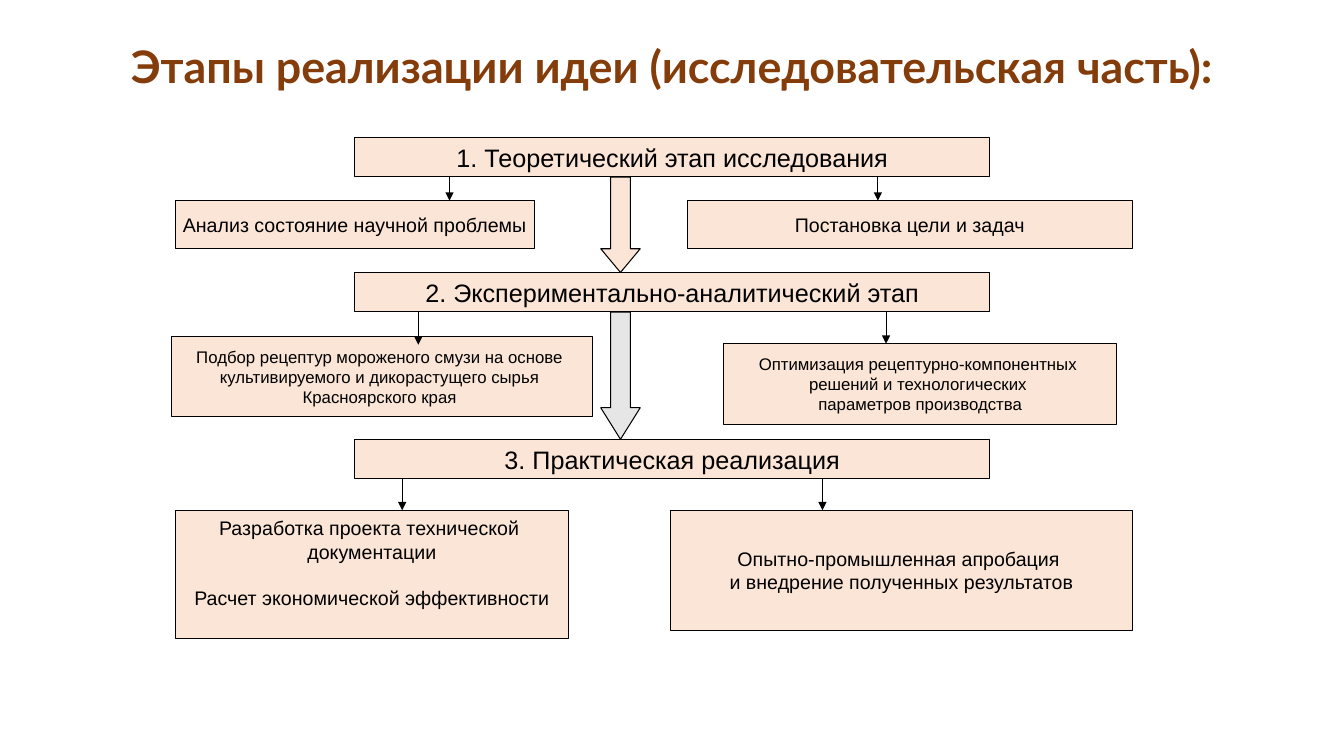
from dataclasses import dataclass

import pptx
import pptx.dml.color
import pptx.enum.shapes
import pptx.enum.text
import pptx.oxml
import pptx.oxml.ns
import pptx.util

Pt = pptx.util.Pt
RGBColor = pptx.dml.color.RGBColor
MSO_SHAPE = pptx.enum.shapes.MSO_SHAPE
MSO_ANCHOR = pptx.enum.text.MSO_ANCHOR
PP_ALIGN = pptx.enum.text.PP_ALIGN

BLACK = RGBColor(0x00, 0x00, 0x00)
BROWN = RGBColor(0x84, 0x3C, 0x0B)
PEACH = RGBColor(0xFB, 0xE5, 0xD6)
GRAY = RGBColor(0xE7, 0xE6, 0xE6)
LINE_WIDTH = 0.75
STAGE_LEFT, STAGE_WIDTH, STAGE_HEIGHT = 253.4, 453.6, 28.2
BLOCK_ARROW_LEFT, BLOCK_ARROW_WIDTH = 429.1, 28.2


@dataclass
class Box:
    left: float
    top: float
    width: float
    height: float
    lines: list[str]
    size: float = 14
    gap_before_last: float = 0
    bottom_inset: float = 3.6


@dataclass
class BlockArrow:
    top: float
    height: float
    head: float
    color: RGBColor


@dataclass
class Arrow:
    x: float
    top: float
    bottom: float


def stage(top: float, text: str) -> Box:
    return Box(STAGE_LEFT, top, STAGE_WIDTH, STAGE_HEIGHT, [text], 18)


BOXES = [
    stage(98, "1. Теоретический этап исследования"),
    Box(125.3, 143.3, 256.3, 34, ["Анализ состояние научной проблемы"]),
    Box(491, 143.3, 317.8, 34, ["Постановка цели и задач"]),
    stage(194.6, "2. Экспериментально-аналитический этап"),
    Box(122.8, 240.5, 300.2, 56.9, [
        "Подбор рецептур мороженого смузи на основе ",
        "культивируемого и дикорастущего сырья ",
        "Красноярского края ",
    ], 12),
    Box(517, 245.5, 280.8, 57.6, [
        "Оптимизация рецептурно-компонентных ",
        "решений и технологических ",
        "параметров производства",
    ], 12),
    stage(313.8, "3. Практическая реализация"),
    Box(125.3, 364.5, 280.8, 91.4, [
        "Разработка проекта технической ",
        "документации",
        "Расчет экономической эффективности",
    ], gap_before_last=16.1, bottom_inset=19.7),
    Box(479, 364.5, 329.8, 85.7, [
        "Опытно-промышленная апробация ",
        "и внедрение полученных результатов",
    ]),
]

BLOCK_ARROWS = [
    BlockArrow(126.6, 68, 0.6, PEACH),
    BlockArrow(223, 90.8, 0.8, GRAY),
]

ARROWS = [
    Arrow(321.1, 126.6, 143.3),
    Arrow(627.1, 126.6, 143.3),
    Arrow(298.8, 223, 246.2),
    Arrow(632.9, 223, 245.5),
    Arrow(287.3, 342, 364.5),
    Arrow(587.5, 342, 364.5),
]


def style_font(r, name: str, size: float, color: RGBColor, bold: bool) -> None:
    for key, value in {"name": name, "size": Pt(size), "bold": bold}.items():
        setattr(r.font, key, value)
    r.font.color.rgb = color


def style_shape(sp, color: RGBColor) -> None:
    sp.shadow.inherit = False
    sp.fill.solid()
    sp.fill.fore_color.rgb = color
    sp.line.color.rgb = BLACK
    sp.line.width = Pt(LINE_WIDTH)


def add_title(s, text: str) -> None:
    sp = s.shapes.add_textbox(Pt(26.6), Pt(23.8), Pt(907.2), Pt(46))
    tf = sp.text_frame
    tf.word_wrap = True
    p = tf.paragraphs[0]
    p.alignment = PP_ALIGN.CENTER
    r = p.add_run()
    r.text = text
    style_font(r, "Lato", 32, BROWN, True)


def add_box(s, box: Box) -> None:
    sp = s.shapes.add_shape(MSO_SHAPE.RECTANGLE, Pt(box.left), Pt(box.top),
                            Pt(box.width), Pt(box.height))
    style_shape(sp, PEACH)
    tf = sp.text_frame
    frame_format = {
        "word_wrap": False,
        "vertical_anchor": MSO_ANCHOR.MIDDLE,
        "margin_bottom": Pt(box.bottom_inset),
    }
    for key, value in frame_format.items():
        setattr(tf, key, value)
    for i, line in enumerate(box.lines):
        p = tf.add_paragraph() if i else tf.paragraphs[0]
        p.alignment = PP_ALIGN.CENTER
        r = p.add_run()
        r.text = line
        style_font(r, "Arial", box.size, BLACK, False)
    if box.gap_before_last:
        tf.paragraphs[-1].space_before = Pt(box.gap_before_last)


def add_block_arrow(s, arrow: BlockArrow) -> None:
    sp = s.shapes.add_shape(MSO_SHAPE.DOWN_ARROW, Pt(BLOCK_ARROW_LEFT), Pt(arrow.top),
                            Pt(BLOCK_ARROW_WIDTH), Pt(arrow.height))
    sp.adjustments[0] = 0.5
    sp.adjustments[1] = arrow.head
    style_shape(sp, arrow.color)


def add_arrow(s, arrow: Arrow) -> None:
    sp = s.shapes.add_connector(pptx.enum.shapes.MSO_CONNECTOR.STRAIGHT,
                                Pt(arrow.x), Pt(arrow.top), Pt(arrow.x), Pt(arrow.bottom))
    sp.line.color.rgb = BLACK
    sp.line.width = Pt(LINE_WIDTH)
    ns = pptx.oxml.ns.nsdecls("a")
    sp.line._get_or_add_ln().append(
        pptx.oxml.parse_xml(f'<a:tailEnd {ns} type="triangle"/>'))
    sp._element.spPr.append(pptx.oxml.parse_xml(f"<a:effectLst {ns}/>"))


def main() -> None:
    prs = pptx.Presentation()
    prs.slide_width, prs.slide_height = Pt(960), Pt(540)
    s = prs.slides.add_slide(prs.slide_layouts[6])
    add_title(s, "Этапы реализации идеи (исследовательская часть):")
    for box in BOXES:
        add_box(s, box)
    for block_arrow in BLOCK_ARROWS:
        add_block_arrow(s, block_arrow)
    for arrow in ARROWS:
        add_arrow(s, arrow)
    prs.save("out.pptx")


if __name__ == "__main__":
    main()
